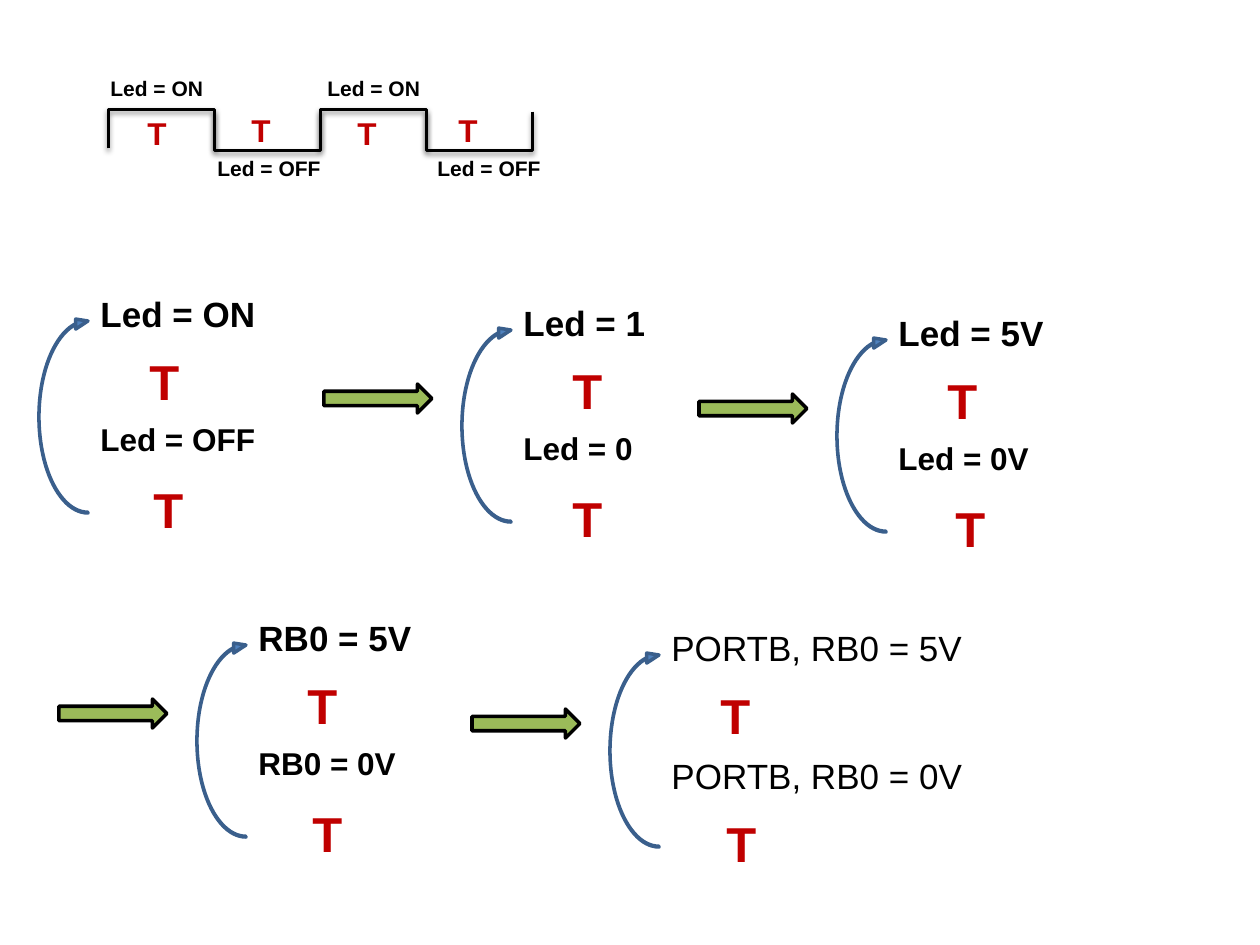
from lxml import etree
from pptx import Presentation
from pptx.dml.color import RGBColor
from pptx.enum.shapes import MSO_SHAPE
from pptx.enum.text import MSO_AUTO_SIZE
from pptx.oxml.ns import qn
from pptx.util import Emu, Pt

BRACKET = MSO_SHAPE.LEFT_BRACKET
LOOP_ARROW = MSO_SHAPE.CURVED_RIGHT_ARROW
RIGHT_ARROW = MSO_SHAPE.RIGHT_ARROW
FIT_SHAPE = MSO_AUTO_SIZE.SHAPE_TO_FIT_TEXT

BLACK = RGBColor(0x00, 0x00, 0x00)
RED = RGBColor(0xC0, 0x00, 0x00)
BLUE = RGBColor(0x4F, 0x81, 0xBD)
DARK_BLUE = RGBColor(0x3A, 0x5F, 0x8C)
GREEN = RGBColor(0x9B, 0xBB, 0x59)

FONT = "Arial"
PX_PER_INCH = 126
BLANK_LAYOUT = 6


def px(length):
    return Emu(round(length * 914400 / PX_PER_INCH))


def add_text(shapes, text, left, top, width, height, size, color=BLACK, bold=True):
    box = shapes.add_textbox(px(left), px(top), px(width), px(height))
    frame = box.text_frame
    frame.word_wrap = True
    frame.auto_size = FIT_SHAPE
    paragraph = frame.paragraphs[0]
    paragraph.text = text
    font = paragraph.font
    font.name, font.size, font.bold = FONT, Pt(size), bold
    font.color.rgb = color


def add_outlined(shapes, kind, left, top, width, height, line, fill=None):
    shape = shapes.add_shape(kind, px(left), px(top), px(width), px(height))
    shape.shadow.inherit = False
    if fill is None:
        shape.fill.background()
    else:
        shape.fill.solid()
        shape.fill.fore_color.rgb = fill
    shape.line.color.rgb = line
    shape.line.width = Pt(2)
    return shape


def add_soft_shadow(shape):
    effects = shape._element.spPr.find(qn("a:effectLst"))
    shadow = etree.SubElement(
        effects, qn("a:outerShdw"), blurRad=str(Pt(3.1)), dist=str(Pt(1.6)),
        dir="5400000", rotWithShape="0")
    color = etree.SubElement(shadow, qn("a:srgbClr"), val=str(BLACK))
    etree.SubElement(color, qn("a:alpha"), val="38000")


def add_square_wave(slide, left, top):
    """Four half periods, alternately high and low, with their labels."""
    shapes = slide.shapes.add_group_shape().shapes
    half_period, depth = 106, 39
    for index in range(4):
        low = index % 2
        bracket = add_outlined(
            shapes, BRACKET, left + 33 + index * half_period,
            top + 7 + 2 * low, depth, half_period, BLACK)
        bracket.adjustments[0] = 0
        bracket.rotation = 270 if low else 90
        add_soft_shadow(bracket)
    for state, x, y, width in (("ON", -11, 0, 129), ("OFF", 96, 80, 147),
                               ("ON", 206, 0, 129), ("OFF", 316, 80, 147)):
        add_text(shapes, f"Led = {state}", left + x, top + y, width, 38, 12)
    for x, y in ((26, 39), (130, 36), (236, 39), (337, 36)):
        add_text(shapes, "T", left + x, top + y, 79, 50, 18, RED)


def add_cycle(slide, left, top, high, low, last_delay_x, long_names=False):
    """Two states with a delay T after each, and an arrow back to the first."""
    shapes = slide.shapes.add_group_shape().shapes
    text_left = left + 49
    width = 325 if long_names else 207
    low_size, low_height = (20, 55) if long_names else (18, 50)
    bold = not long_names
    add_text(shapes, high, text_left, top, width, 55, 20, bold=bold)
    add_text(shapes, low, text_left, top + 128, width + 10, low_height,
             low_size, bold=bold)
    for x, y in ((98, 59), (last_delay_x, 187)):
        add_text(shapes, "T", left + x, top + y, 79, 72, 28, RED)
    loop = add_outlined(shapes, LOOP_ARROW, left, top + 30, 49, 197, DARK_BLUE, BLUE)
    for index, value in enumerate((0.016, 0.204, 0.25)):
        loop.adjustments[index] = value
    loop.rotation = 180
    loop._element.spPr.xfrm.set("flipH", "1")


def add_step_arrow(slide, cycle_left, cycle_top):
    """Arrow that leads into the cycle at the given place."""
    add_outlined(slide.shapes, RIGHT_ARROW, cycle_left - 138, cycle_top + 89,
                 108, 29, BLACK, GREEN)


def main():
    presentation = Presentation()
    presentation.slide_width, presentation.slide_height = px(1260), px(945)
    slide = presentation.slides.add_slide(presentation.slide_layouts[BLANK_LAYOUT])

    add_square_wave(slide, 109, 69)
    cycles = (
        (39, 286, "Led = ON", "Led = OFF", 102),
        (462, 295, "Led = 1", "Led = 0", 98),
        (837, 305, "Led = 5V", "Led = 0V", 106),
        (197, 610, "RB0 = 5V", "RB0 = 0V", 103),
        (610, 620, "PORTB, RB0 = 5V", "PORTB, RB0 = 0V", 104, True),
    )
    for index, cycle in enumerate(cycles):
        if index:
            add_step_arrow(slide, *cycle[:2])
        add_cycle(slide, *cycle)

    presentation.save("out.pptx")


if __name__ == "__main__":
    main()
